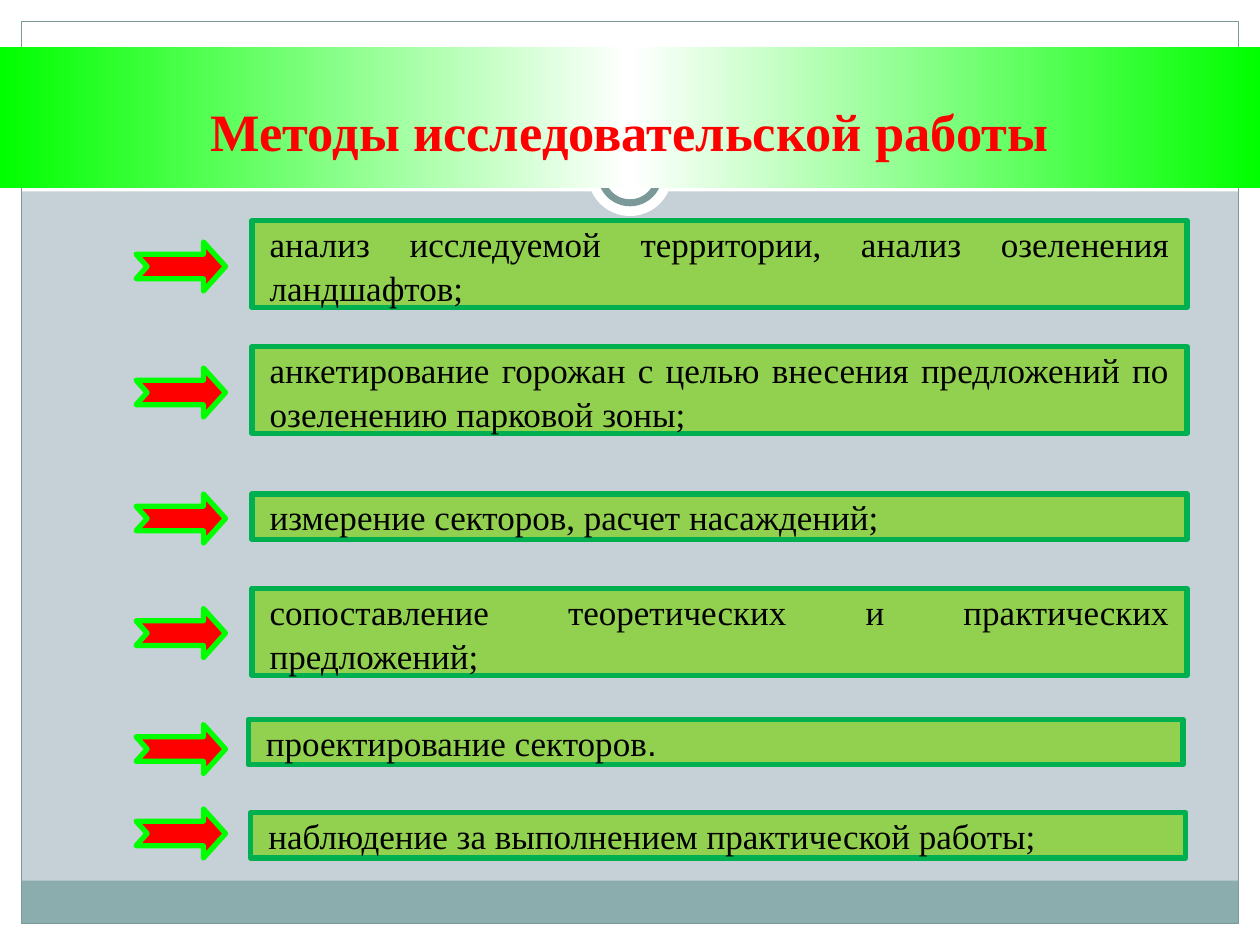
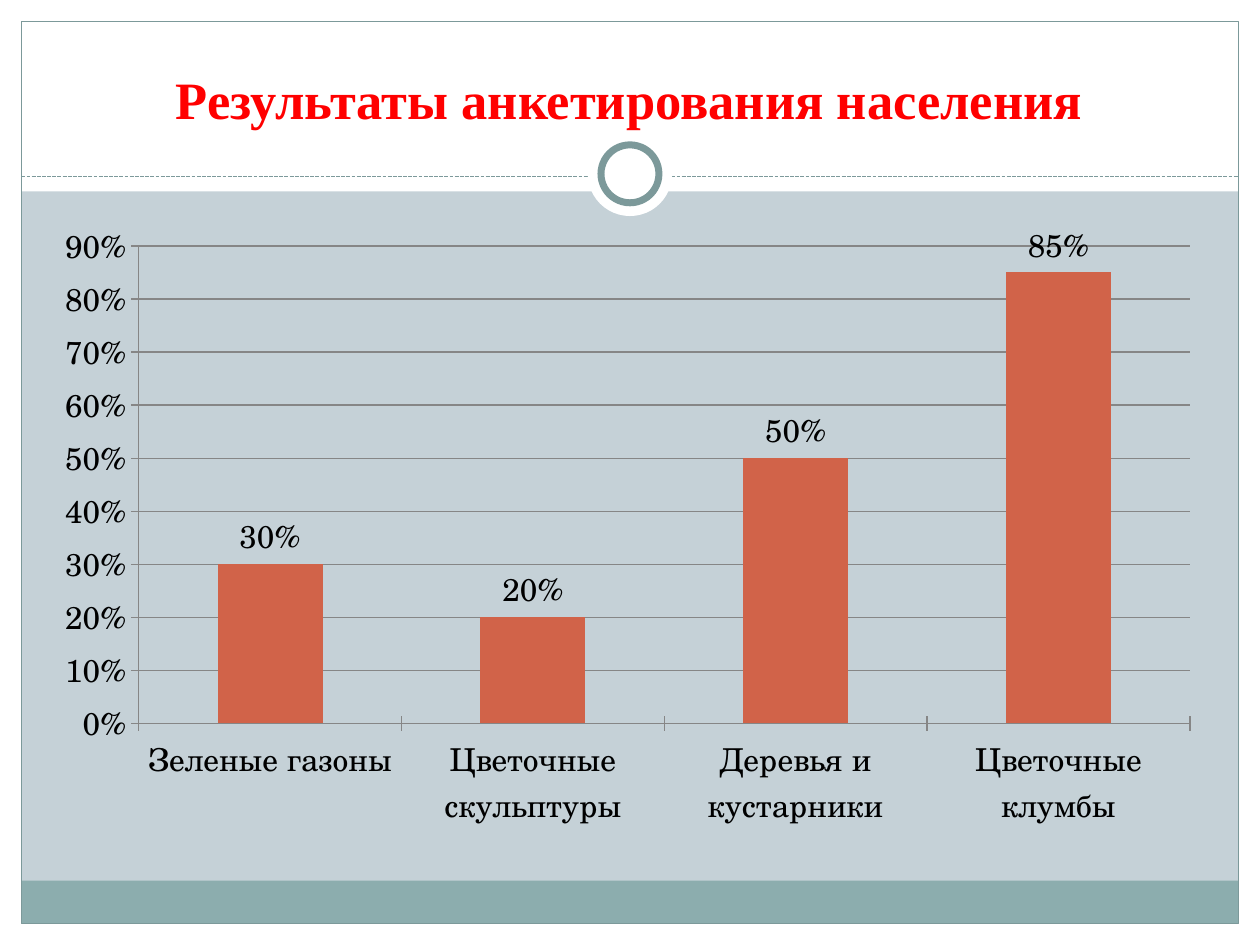
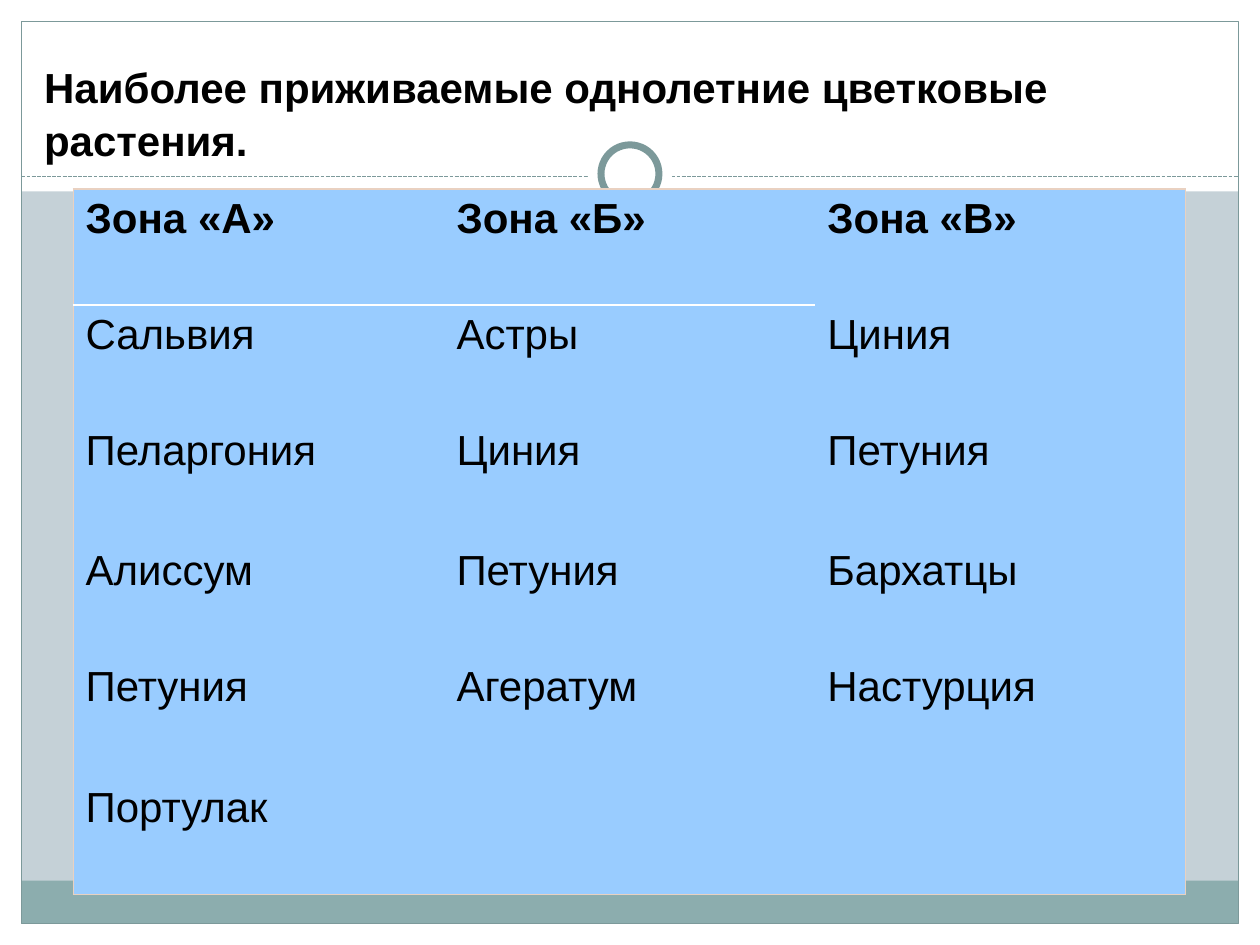
"""Build three slides on research methods, survey results and annual flowers."""
from lxml.etree import SubElement
from pptx import Presentation
from pptx.chart.data import CategoryChartData
from pptx.dml.color import RGBColor
from pptx.enum.chart import XL_CHART_TYPE, XL_LABEL_POSITION, XL_TICK_MARK
from pptx.enum.dml import MSO_LINE
from pptx.enum.shapes import MSO_CONNECTOR, MSO_SHAPE
from pptx.enum.text import MSO_ANCHOR, MSO_AUTO_SIZE, PP_ALIGN
from pptx.oxml.ns import qn
from pptx.util import Inches, Pt

WIDTH, HEIGHT = 10, 7.5
MARGIN = 0.17
RULE_Y = 1.4
NO_TABLE_STYLE = "{2D5ABB26-0587-4C30-8999-92F81FD0307C}"
SERIF, SANS, SCHOOL = "Times New Roman", "Arial", "TeX Gyre Schola"
COLORS = {
    "backdrop": "C5D1D7", "white": "FFFFFF", "footer": "8CADAE", "rule": "7C999A",
    "red": "FF0000", "lime": "00FF00", "black": "000000", "method": "92D050",
    "method_edge": "00B050", "bar": "D16349", "grid": "868686",
    "cell": "99CCFF", "cell_edge": "E9D1C1",
}

METHODS_TITLE = "Методы исследовательской работы"
METHODS = [
    {"text": ["анализ исследуемой территории, анализ озеленения ландшафтов;"],
     "left": 2, "top": 1.75, "lines": 2, "arrow": 1.92},
    {"text": ["анкетирование горожан с целью внесения предложений по озеленению парковой зоны;"],
     "left": 2, "top": 2.75, "lines": 2, "arrow": 2.92},
    {"text": ["измерение секторов, расчет насаждений;"],
     "left": 2, "top": 3.92, "lines": 1, "arrow": 3.92},
    {"text": ["сопоставление теоретических и практических предложений;"],
     "left": 2, "top": 4.67, "lines": 2, "arrow": 4.83},
    {"text": ["проектирование секторов", "."],
     "left": 1.97, "top": 5.71, "lines": 1, "arrow": 5.75},
    {"text": ["наблюдение за выполнением практической работы;"],
     "left": 1.99, "top": 6.45, "lines": 1, "arrow": 6.42},
]

SURVEY_TITLE = "Результаты анкетирования населения"
SURVEY = {
    "Зеленые газоны": 0.3,
    "Цветочные скульптуры": 0.2,
    "Деревья и кустарники": 0.5,
    "Цветочные клумбы": 0.85,
}

FLOWERS_TITLE = "Наиболее приживаемые однолетние цветковые растения."
FLOWERS = [
    ("Зона «А»", "Зона «Б»", "Зона «В»"),
    ("Сальвия", "Астры", "Циния"),
    ("Пеларгония", "Циния", "Петуния"),
    ("Алиссум", "Петуния", "Бархатцы"),
    ("Петуния", "Агератум", "Настурция"),
    ("Портулак", "", ""),
]
FLOWER_ROWS = [0.92, 0.92, 0.96, 0.92, 0.96, 0.92]


def rgb(name):
    return RGBColor.from_string(COLORS[name])


def inches(*lengths):
    return [Inches(length) for length in lengths]


def write(frame, *texts, fonts=(SERIF,), size=20, color="black", bold=False,
          align=PP_ALIGN.LEFT, anchor=MSO_ANCHOR.TOP, insets=(0.1, 0.05, 0.1, 0.05),
          spacing=1.0):
    frame.word_wrap = True
    frame.auto_size = MSO_AUTO_SIZE.NONE
    frame.vertical_anchor = anchor
    (frame.margin_left, frame.margin_top,
     frame.margin_right, frame.margin_bottom) = inches(*insets)
    paragraph = frame.paragraphs[0]
    paragraph.alignment = align
    paragraph.line_spacing = spacing
    for index, text in enumerate(texts):
        run = paragraph.add_run()
        run.text = text
        run.font.name = fonts[min(index, len(fonts) - 1)]
        run.font.size = Pt(size)
        run.font.bold = bold
        run.font.color.rgb = rgb(color)


def add_figure(slide, kind, box, fill=None, edge=None, weight=0.75):
    figure = slide.shapes.add_shape(kind, *inches(*box))
    figure.shadow.inherit = False
    if fill:
        figure.fill.solid()
        figure.fill.fore_color.rgb = rgb(fill)
    else:
        figure.fill.background()
    if edge:
        figure.line.color.rgb = rgb(edge)
        figure.line.width = Pt(weight)
    else:
        figure.line.fill.background()
    return figure


def add_title(slide, text, box, **style):
    title = slide.shapes.title
    title.left, title.top, title.width, title.height = inches(*box)
    write(title.text_frame, text, **style)
    return title


def decorate(layout, slide):
    """Draw the shared bands, frame, rule and ring, and hand them to the layout."""
    layout.background.fill.solid()
    layout.background.fill.fore_color.rgb = rgb("backdrop")
    inner = WIDTH - 2 * MARGIN
    bands = [
        (0, HEIGHT - MARGIN, WIDTH, MARGIN), (0, 0, WIDTH, 1.52),
        (0, 0, MARGIN, HEIGHT), (WIDTH - MARGIN, 0, MARGIN, HEIGHT),
    ]
    parts = [add_figure(slide, MSO_SHAPE.RECTANGLE, band, "white") for band in bands]
    parts.append(add_figure(slide, MSO_SHAPE.RECTANGLE, (MARGIN, 6.99, inner, 0.34), "footer"))
    parts.append(add_figure(slide, MSO_SHAPE.RECTANGLE,
                            (MARGIN, MARGIN, inner, HEIGHT - 2 * MARGIN), edge="rule"))
    rule = slide.shapes.add_connector(
        MSO_CONNECTOR.STRAIGHT, *inches(MARGIN, RULE_Y, WIDTH - MARGIN, RULE_Y))
    rule.line.color.rgb = rgb("rule")
    rule.line.width = Pt(0.75)
    rule.line.dash_style = MSO_LINE.SQUARE_DOT
    SubElement(rule.element.spPr, qn("a:effectLst"))
    parts.append(rule)
    for size, edge in ((0.67, None), (0.46, "rule")):
        box = (WIDTH / 2 - size / 2, 1.38 - size / 2, size, size)
        parts.append(add_figure(slide, MSO_SHAPE.OVAL, box, "white", edge, 4))
    for number, part in enumerate(parts, 100):
        part.element.xpath(".//p:cNvPr")[0].set("id", str(number))
        layout.shapes.element.append(part.element)


def fill_gradient(shape, *stops):
    shape.fill.gradient()
    shape.fill.gradient_angle = 0
    stop_list = shape.element.spPr.find(qn("a:gradFill")).find(qn("a:gsLst"))
    for stop in list(stop_list):
        stop_list.remove(stop)
    for index, name in enumerate(stops):
        stop = SubElement(stop_list, qn("a:gs"), pos=str(100000 * index // (len(stops) - 1)))
        SubElement(stop, qn("a:srgbClr"), val=COLORS[name])


def build_methods(slide):
    title = add_title(slide, METHODS_TITLE, (0, 0.37, WIDTH, 1.12), size=30, color="red",
                      bold=True, align=PP_ALIGN.CENTER, anchor=MSO_ANCHOR.BOTTOM,
                      insets=(0.59, 0.2, 0.59, 0.2))
    fill_gradient(title, "lime", "white", "lime")
    for method in METHODS:
        box = (method["left"], method["top"], 7.42, 0.03 + 0.33 * method["lines"])
        panel = add_figure(slide, MSO_SHAPE.RECTANGLE, box, "method", "method_edge", 3)
        write(panel.text_frame, *method["text"], fonts=(SERIF, SANS), spacing=1.05,
              align=PP_ALIGN.JUSTIFY, insets=(0.14, 0, 0.14, 0.02))
        arrow = add_figure(slide, MSO_SHAPE.NOTCHED_RIGHT_ARROW,
                           (1.08, method["arrow"], 0.71, 0.39), "red", "lime", 3)
        arrow.adjustments[0], arrow.adjustments[1] = 0.5, 0.45


def build_survey(slide):
    add_title(slide, SURVEY_TITLE, (0.33, 0.25, 9.33, 0.83), size=30, color="red", bold=True,
              align=PP_ALIGN.CENTER, anchor=MSO_ANCHOR.BOTTOM)
    answers = CategoryChartData(number_format="0%")
    answers.categories = list(SURVEY)
    answers.add_series("Series 1", list(SURVEY.values()))
    chart = slide.shapes.add_chart(XL_CHART_TYPE.COLUMN_CLUSTERED,
                                   *inches(0.33, 1.67, 9.3, 5), answers).chart
    chart.has_legend = chart.has_title = False
    chart.font.name, chart.font.size = SCHOOL, Pt(18)
    chart.font.color.rgb = rgb("black")
    shares = chart.value_axis
    shares.minimum_scale, shares.maximum_scale, shares.major_unit = 0, 0.9, 0.1
    shares.tick_labels.number_format = "0%"
    shares.tick_labels.number_format_is_linked = False
    shares.has_major_gridlines = True
    shares.major_gridlines.format.line.color.rgb = rgb("grid")
    for axis in (shares, chart.category_axis):
        axis.major_tick_mark = XL_TICK_MARK.CROSS
        axis.format.line.color.rgb = rgb("grid")
    plot = chart.plots[0]
    plot.gap_width = 150
    plot.vary_by_categories = False
    bars = plot.series[0]
    bars.format.fill.solid()
    bars.format.fill.fore_color.rgb = rgb("bar")
    plot.has_data_labels = True
    labels = plot.data_labels
    labels.show_value = True
    labels.number_format, labels.number_format_is_linked = "0%", False
    labels.position = XL_LABEL_POSITION.OUTSIDE_END


def add_border(cell, side, color, weight):
    line = SubElement(cell._tc.get_or_add_tcPr(), qn(f"a:ln{side}"), w=str(Pt(weight)))
    SubElement(SubElement(line, qn("a:solidFill")), qn("a:srgbClr"), val=COLORS[color])


def build_flowers(slide):
    add_title(slide, FLOWERS_TITLE, (0.25, 0.42, 9.42, 0.91), fonts=(SANS,), size=24,
              bold=True, spacing=1.05)
    last_row, last_column = len(FLOWERS) - 1, len(FLOWERS[0]) - 1
    holder = slide.shapes.add_table(last_row + 1, last_column + 1,
                                    *inches(0.58, 1.5, 8.83, sum(FLOWER_ROWS)))
    holder.element.xpath(".//a:tableStyleId")[0].text = NO_TABLE_STYLE
    zones = holder.table
    zones.first_row = zones.horz_banding = False
    for row, height in zip(zones.rows, FLOWER_ROWS):
        row.height = Inches(height)
    for r, names in enumerate(FLOWERS):
        for c, name in enumerate(names):
            cell = zones.cell(r, c)
            outer = {"L": c == 0, "R": c == last_column, "T": r == 0, "B": r == last_row}
            for side, on_edge in outer.items():
                if on_edge:
                    add_border(cell, side, "cell_edge", 0.75)
            if r == 0 and c < last_column:
                add_border(cell, "B", "white", 1.57)
            cell.fill.solid()
            cell.fill.fore_color.rgb = rgb("cell")
            if name:
                write(cell.text_frame, name, fonts=(SANS,), size=24, bold=r == 0)


def main():
    deck = Presentation()
    deck.slide_width, deck.slide_height = inches(WIDTH, HEIGHT)
    layout = deck.slide_layouts[5]
    for index, build in enumerate((build_methods, build_survey, build_flowers)):
        slide = deck.slides.add_slide(layout)
        if index == 0:
            decorate(layout, slide)
        build(slide)
    deck.save("out.pptx")


if __name__ == "__main__":
    main()
